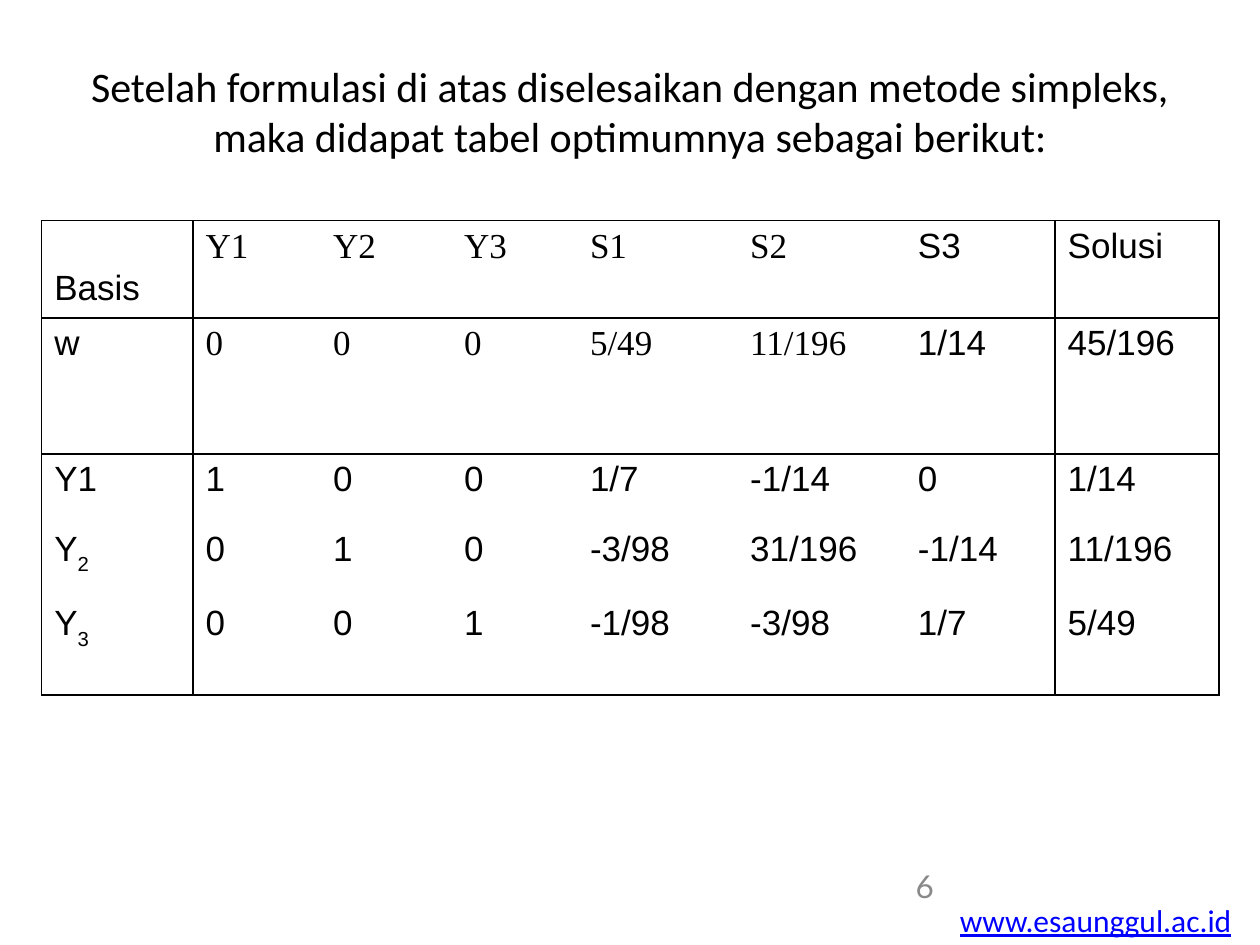
from lxml.etree import SubElement
from pptx import Presentation
from pptx.dml.color import RGBColor
from pptx.enum.text import MSO_ANCHOR, PP_ALIGN
from pptx.oxml.ns import qn
from pptx.util import Cm, Pt

BLACK = "000000"
ROWS = [
    ["Basis", "Y1", "Y2", "Y3", "S1", "S2", "S3", "Solusi"],
    ["w", "0", "0", "0", "5/49", "11/196", "1/14", "45/196"],
    ["Y1", "1", "0", "0", "1/7", "-1/14", "0", "1/14"],
    ["Y_2", "0", "1", "0", "-3/98", "31/196", "-1/14", "11/196"],
    ["Y_3", "0", "0", "1", "-1/98", "-3/98", "1/7", "5/49"],
]
COL_WIDTHS = [3.05, 2.57, 2.64, 2.54, 3.23, 3.38, 3.02, 3.3]
ROW_HEIGHTS = [1.96, 2.74, 1.4, 1.5, 1.96]
ROW_RULES = {0, 1, 2, 5}  # grid lines that are drawn, counted from the top
COL_RULES = {0, 1, 7, 8}  # and from the left


def color(value):
    return RGBColor.from_string(value)


class SlideBuilder:
    """Holds the text style and the slide being filled."""

    base = {"name": "Calibri", "size": Pt(18)}

    def __init__(self, prs):
        self.s = prs.slides.add_slide(prs.slide_layouts[5])

    def add_runs(self, p, text, rgb=BLACK, **style):
        """Add text to a paragraph; what follows an underscore is subscript."""
        for i, part in enumerate(text.split("_")):
            r = p.add_run()
            r.text = part
            for key, value in {**self.base, **style}.items():
                setattr(r.font, key, value)
            r.font.color.rgb = color(rgb)
            if i:
                r.font._element.set("baseline", "-30000")

    def title(self, text, x, y, w, h):
        sp = self.s.shapes.title
        sp.left, sp.top, sp.width, sp.height = map(Cm, (x, y, w, h))
        sp.text_frame.vertical_anchor = MSO_ANCHOR.MIDDLE
        p = sp.text_frame.paragraphs[0]
        p.alignment = PP_ALIGN.CENTER
        self.add_runs(p, text, size=Pt(24))

    def text(self, text, x, y, w, h, wrap=True, **style):
        tf = self.s.shapes.add_textbox(*map(Cm, (x, y, w, h))).text_frame
        tf.word_wrap = wrap
        self.add_runs(tf.paragraphs[0], text, **style)

    def borders(self, cell, row, col):
        sides = {"L": col in COL_RULES, "R": col + 1 in COL_RULES,
                 "T": row in ROW_RULES, "B": row + 1 in ROW_RULES}
        tc_pr = cell._tc.get_or_add_tcPr()
        for side, drawn in sides.items():
            ln = SubElement(tc_pr, qn(f"a:ln{side}"), w=str(Pt(1)))
            fill = SubElement(ln, qn("a:solidFill" if drawn else "a:noFill"))
            if drawn:
                SubElement(fill, qn("a:srgbClr"), val=BLACK)

    def table(self, rows, x, y, widths, heights):
        size = map(Cm, (x, y, sum(widths), sum(heights)))
        table = self.s.shapes.add_table(len(rows), len(widths), *size).table
        table.first_row = table.horz_banding = False
        for column, width in zip(table.columns, widths):
            column.width = Cm(width)
        for row, height in zip(table.rows, heights):
            row.height = Cm(height)
        for i, row in enumerate(rows):
            for j, text in enumerate(row):
                cell = table.cell(i, j)
                self.borders(cell, i, j)
                cell.fill.background()
                serif = i < 2 and 1 <= j <= 5
                self.add_runs(cell.text_frame.paragraphs[0], text, size=Pt(20),
                              name="Times New Roman" if serif else "Arial")
        corner = table.cell(0, 0)
        corner.vertical_anchor = MSO_ANCHOR.BOTTOM
        corner.margin_bottom = Cm(0.2)


def main():
    prs = Presentation()
    prs.slide_width, prs.slide_height = Cm(25.4), Cm(19.05)
    b = SlideBuilder(prs)
    b.text("www.esaunggul.ac.id", 19.1, 18.03, 6.05, 1.02, wrap=False,
           rgb="0000FF", underline=True)
    b.title("Setelah formulasi di atas diselesaikan dengan metode simpleks, "
            "maka didapat tabel optimumnya sebagai berikut:",
            0.84, 0.64, 23.72, 3.18)
    b.table(ROWS, 0.84, 4.45, COL_WIDTHS, ROW_HEIGHTS)
    b.text("6", 18.21, 17.35, 6.35, 1.32, rgb="898989", name="Lato")
    prs.save("out.pptx")


if __name__ == "__main__":
    main()
